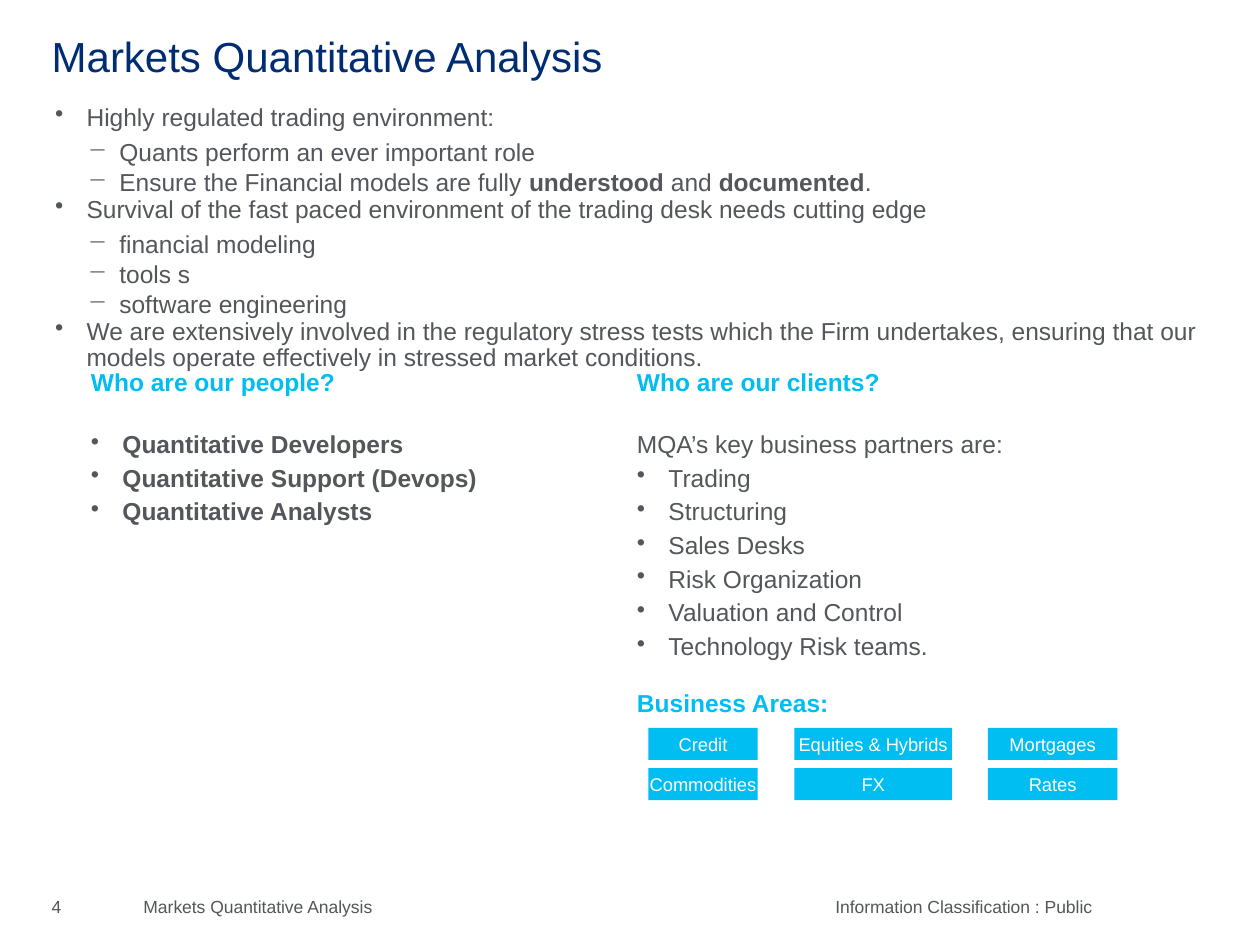
from dataclasses import dataclass

import lxml.etree
import pptx
import pptx.dml.color
import pptx.enum.shapes
import pptx.enum.text
import pptx.oxml.ns
import pptx.util

Pt = pptx.util.Pt
Align = pptx.enum.text.PP_ALIGN
Anchor = pptx.enum.text.MSO_ANCHOR


@dataclass(frozen=True)
class Theme:
    font: str = "Arial"
    navy: str = "002D72"
    cyan: str = "00BDF2"
    gray: str = "53565A"
    white: str = "FFFFFF"
    title_size: float = 24
    body_size: float = 14
    label_size: float = 10.5
    footer_size: float = 10


@dataclass(frozen=True)
class Frame:
    left: float
    top: float
    width: float
    height: float


@dataclass(frozen=True)
class Line:
    text: str
    size: float
    color: str
    bold: bool = False
    bullet: str = ""
    margin: float = 0
    spacing: float = 1
    before: float = 0
    after: float = 0
    align: Align = Align.LEFT


THEME = Theme()
HANG = 18


def heading(text: str, before: float = 0, after: float = 0) -> Line:
    return Line(text, THEME.body_size, THEME.cyan, bold=True, before=before, after=after)


def point(text: str) -> Line:
    return Line(text, THEME.body_size, THEME.gray, bullet="•", margin=HANG, spacing=0.9, after=3.3)


def subpoint(text: str) -> Line:
    return Line(text, THEME.body_size, THEME.gray, bullet="−", margin=36.7, after=0.3)


def item(text: str, bold: bool = False, bullet: str = "•") -> Line:
    margin = HANG if bullet else 0
    return Line(text, THEME.body_size, THEME.gray, bold, bullet, margin, spacing=0.95, after=3.3)


def footer(text: str, align: Align = Align.LEFT) -> Line:
    return Line(text, THEME.footer_size, THEME.gray, align=align)


def style_font(font, line: Line) -> None:
    font.name = THEME.font
    font.size = Pt(line.size)
    font.bold = line.bold
    font.color.rgb = pptx.dml.color.RGBColor.from_string(line.color)


def write_line(para, line: Line) -> None:
    para.alignment = line.align
    para.line_spacing = line.spacing
    para.space_before = Pt(line.before)
    para.space_after = Pt(line.after)
    if line.bullet:
        properties = para._p.get_or_add_pPr()
        properties.set("marL", str(Pt(line.margin)))
        properties.set("indent", str(-Pt(HANG)))
        bullet = lxml.etree.SubElement(properties, pptx.oxml.ns.qn("a:buChar"))
        bullet.set("char", line.bullet)
    style_font(para.font, line)
    for index, part in enumerate(line.text.split("**")):
        span = para.add_run()
        span.text = part
        if index % 2:
            span.font.bold = True


def fill_text(box, lines: list[Line], anchor: Anchor = Anchor.TOP) -> None:
    frame = box.text_frame
    frame.word_wrap = True
    frame.auto_size = pptx.enum.text.MSO_AUTO_SIZE.NONE
    frame.vertical_anchor = anchor
    frame.margin_left = frame.margin_right = frame.margin_top = frame.margin_bottom = 0
    for index, line in enumerate(lines):
        write_line(frame.add_paragraph() if index else frame.paragraphs[0], line)


def lengths(frame: Frame) -> tuple:
    return Pt(frame.left), Pt(frame.top), Pt(frame.width), Pt(frame.height)


def add_text(page, frame: Frame, lines: list[Line]) -> None:
    fill_text(page.shapes.add_textbox(*lengths(frame)), lines)


def add_title(page, frame: Frame, text: str) -> None:
    box = page.shapes.title
    box.left, box.top, box.width, box.height = lengths(frame)
    fill_text(box, [Line(text, THEME.title_size, THEME.navy)])


def add_area(page, frame: Frame, text: str) -> None:
    box = page.shapes.add_shape(pptx.enum.shapes.MSO_SHAPE.RECTANGLE, *lengths(frame))
    box.shadow.inherit = False
    box.fill.solid()
    box.fill.fore_color.rgb = pptx.dml.color.RGBColor.from_string(THEME.cyan)
    box.line.fill.background()
    label = Line(text, THEME.label_size, THEME.white, align=Align.CENTER)
    fill_text(box, [label], Anchor.MIDDLE)
    box.text_frame.word_wrap = False


SUMMARY = [
    point("Highly regulated trading environment:"),
    subpoint("Quants perform an ever important role"),
    subpoint("Ensure the Financial models are fully **understood** and **documented**."),
    point("Survival of the fast paced environment of the trading desk needs cutting edge"),
    subpoint("financial modeling"),
    subpoint("tools s"),
    subpoint("software engineering"),
    point("We are extensively involved in the regulatory stress tests which the Firm undertakes, "
          "ensuring that our models operate effectively in stressed market conditions."),
]
PEOPLE = [heading("Who are our people?", after=20)] + [
    item(text, bold=True) for text in
    ("Quantitative Developers", "Quantitative Support (Devops)", "Quantitative Analysts")
]
CLIENTS = [
    heading("Who are our clients?", after=20),
    item("MQA’s key business partners are:", bullet=""),
    *map(item, ("Trading", "Structuring", "Sales Desks", "Risk Organization",
                "Valuation and Control", "Technology Risk teams.")),
    heading("Business Areas:", before=12),
]
AREA_COLUMNS = [
    (370.5, 62.5, ("Credit", "Commodities")),
    (454, 90, ("Equities & Hybrids", "FX")),
    (564.5, 74, ("Mortgages", "Rates")),
]
AREA_TOP, AREA_HEIGHT, AREA_PITCH = 416, 18.3, 23


def main() -> None:
    deck = pptx.Presentation()
    deck.slide_width, deck.slide_height = Pt(720), Pt(540)
    page = deck.slides.add_slide(deck.slide_layouts.get_by_name("Title Only"))
    name = "Markets Quantitative Analysis"
    add_title(page, Frame(29.5, 17.3, 648, 38), name)
    add_text(page, Frame(31.5, 60, 664.5, 150), SUMMARY)
    add_text(page, Frame(52, 209.5, 272, 217.5), PEOPLE)
    add_text(page, Frame(364, 209.5, 320, 287), CLIENTS)
    for left, width, labels in AREA_COLUMNS:
        for row, text in enumerate(labels):
            add_area(page, Frame(left, AREA_TOP + row * AREA_PITCH, width, AREA_HEIGHT), text)
    add_text(page, Frame(29.5, 512, 44, 12), [footer("4")])
    add_text(page, Frame(82, 512, 163, 14), [footer(name)])
    add_text(page, Frame(245.5, 512, 378.5, 14),
             [footer("Information Classification : Public", Align.RIGHT)])
    deck.save("out.pptx")


if __name__ == "__main__":
    main()
